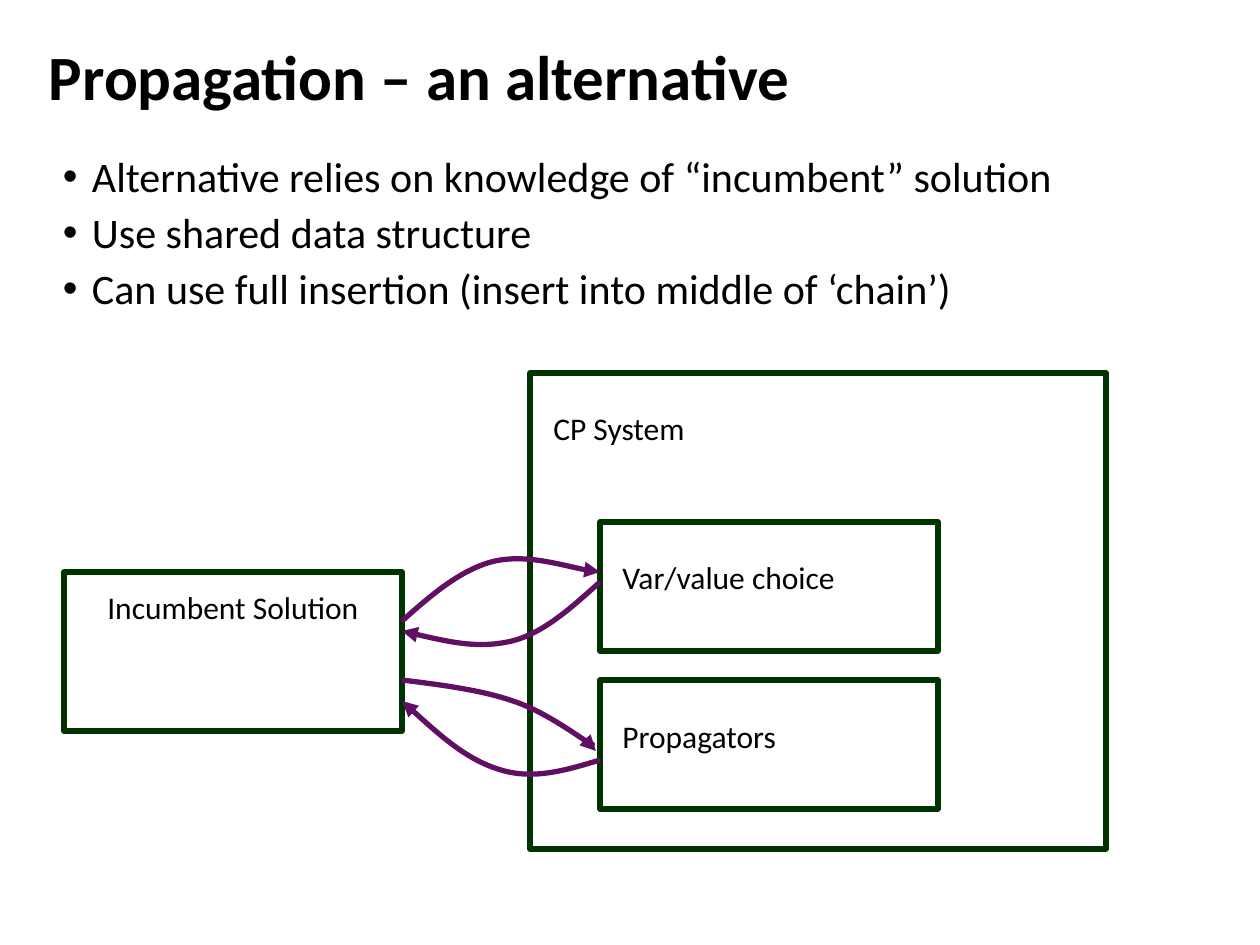
from lxml.etree import SubElement
from pptx import Presentation
from pptx.dml.color import RGBColor
from pptx.enum.shapes import MSO_SHAPE
from pptx.oxml.ns import qn
from pptx.util import Emu, Pt

FONT = "Calibri"
BLACK, GREEN, PURPLE = "000000", "003300", "610F63"

BULLETS = [
    "Alternative relies on knowledge of “incumbent” solution",
    "Use shared data structure",
    "Can use full insertion (insert into middle of ‘chain’)",
]

# (frame, label, label area), each area as left, top, width, height
COMPONENTS = [
    ((600, 522, 338, 129), "Var/value choice", (610, 552, 318, 54)),
    ((600, 680, 338, 129), "Propagators", (610, 711, 318, 54)),
    ((530, 373, 576, 476), "CP System", (541, 403, 542, 54)),
    ((64, 572, 338, 159), "Incumbent Solution", (95, 582, 318, 97)),
]

# Start point, then three Bézier points for each segment
ARROWS = [
    [(402, 621), (430, 596), (459, 571), (491, 562),
     (524, 553), (582, 571), (600, 572)],
    [(600, 582), (572, 607), (544, 633), (512, 641),
     (478, 649), (440, 640), (402, 631)],
    [(402, 680), (442, 685), (481, 690), (513, 701), (543, 711),
     (572, 732), (586, 741), (600, 748), (597, 750), (596, 751)],
    [(600, 760), (567, 770), (534, 780), (501, 770),
     (467, 760), (435, 731), (402, 701)],
]


def px(length):
    return Emu(round(length * 914400 / 126))


def color(value):
    return RGBColor.from_string(value)


def style_outline(shape, line_color):
    shape.shadow.inherit = False
    shape.fill.background()
    shape.line.color.rgb = color(line_color)
    shape.line.width = Pt(3)


def style_text(para, size, bold=False):
    for span in para.runs:
        span.font.name = FONT
        span.font.size = Pt(size)
        span.font.bold = bold
        span.font.color.rgb = color(BLACK)


def add_text(page, area, text, size, bold=False, inset=True):
    box = page.shapes.add_textbox(*map(px, area))
    frame = box.text_frame
    frame.word_wrap = True
    if not inset:
        frame.margin_left = frame.margin_right = 0
        frame.margin_top = frame.margin_bottom = 0
    frame.text = text
    for para in frame.paragraphs:
        style_text(para, size, bold)
    return frame


def add_bullets(page, area, items):
    frame = add_text(page, area, "\n".join(items), 24, inset=False)
    for index, para in enumerate(frame.paragraphs):
        para.line_spacing = 0.9
        para.space_before = Pt(6 if index else 0)
        properties = para._p.get_or_add_pPr()
        properties.set("marL", str(px(29)))
        properties.set("indent", str(px(-29)))
        SubElement(properties, qn("a:buFont")).set("typeface", "Arial")
        SubElement(properties, qn("a:buChar")).set("char", "•")


def add_component(page, frame_area, label, label_area):
    frame = page.shapes.add_shape(MSO_SHAPE.RECTANGLE, *map(px, frame_area))
    style_outline(frame, GREEN)
    add_text(page, label_area, label, 18)


def add_curved_arrow(page, points):
    """Build an open outline and turn each three line steps into a Bézier."""
    start, *steps = [(px(x), px(y)) for x, y in points]
    builder = page.shapes.build_freeform(*start)
    builder.add_line_segments(steps, close=False)
    arrow = builder.convert_to_shape()
    style_outline(arrow, PURPLE)

    outline = next(arrow._element.iter(qn("a:path")))
    lines = outline.findall(qn("a:lnTo"))
    for first in range(0, len(lines), 3):
        curve = SubElement(outline, qn("a:cubicBezTo"))
        for line in lines[first:first + 3]:
            curve.append(line[0])
            outline.remove(line)

    tail = SubElement(arrow.line._get_or_add_ln(), qn("a:tailEnd"))
    tail.set("type", "triangle")


def main():
    deck = Presentation()
    deck.slide_width, deck.slide_height = px(1260), px(945)
    page = deck.slides.add_slide(deck.slide_layouts[6])
    add_text(page, (49, 38, 968, 117), "Propagation – an alternative", 36,
             bold=True, inset=False)
    add_bullets(page, (63, 156, 1134, 306), BULLETS)
    for component in COMPONENTS:
        add_component(page, *component)
    for points in ARROWS:
        add_curved_arrow(page, points)
    deck.save("out.pptx")


if __name__ == "__main__":
    main()
